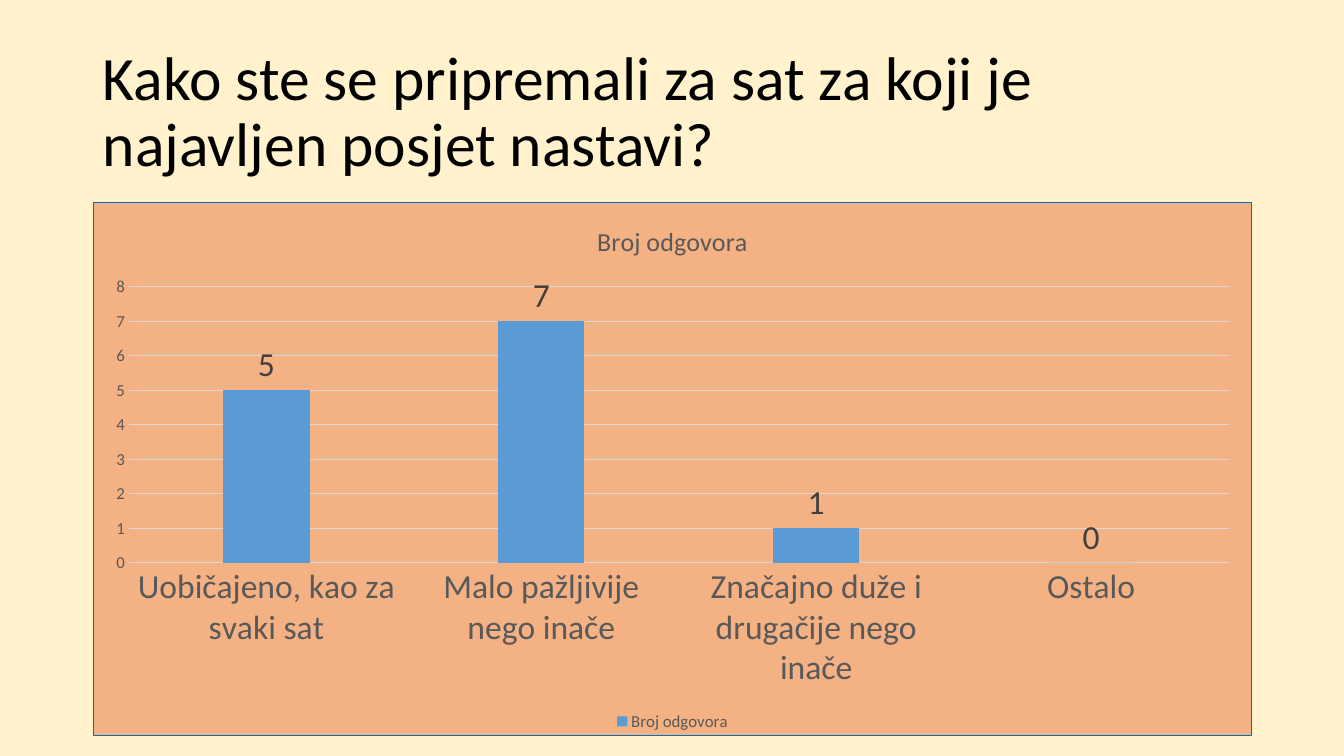
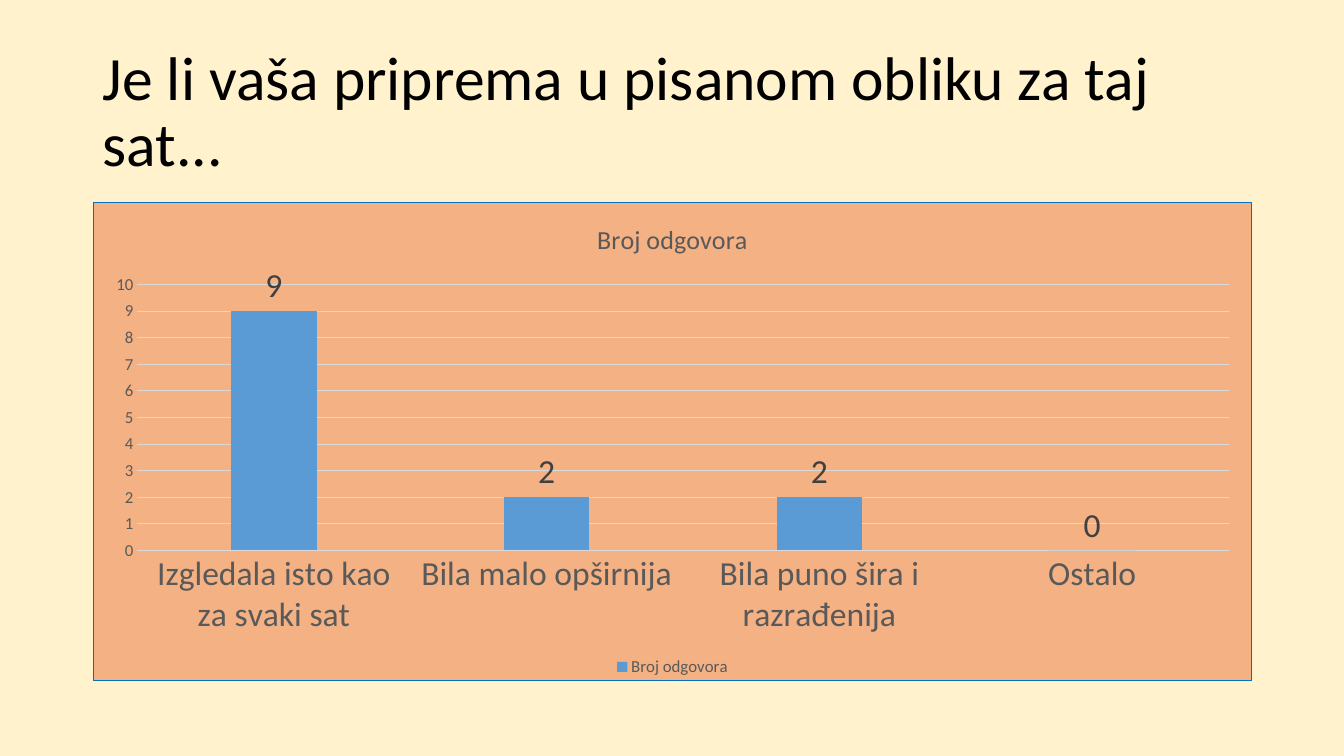
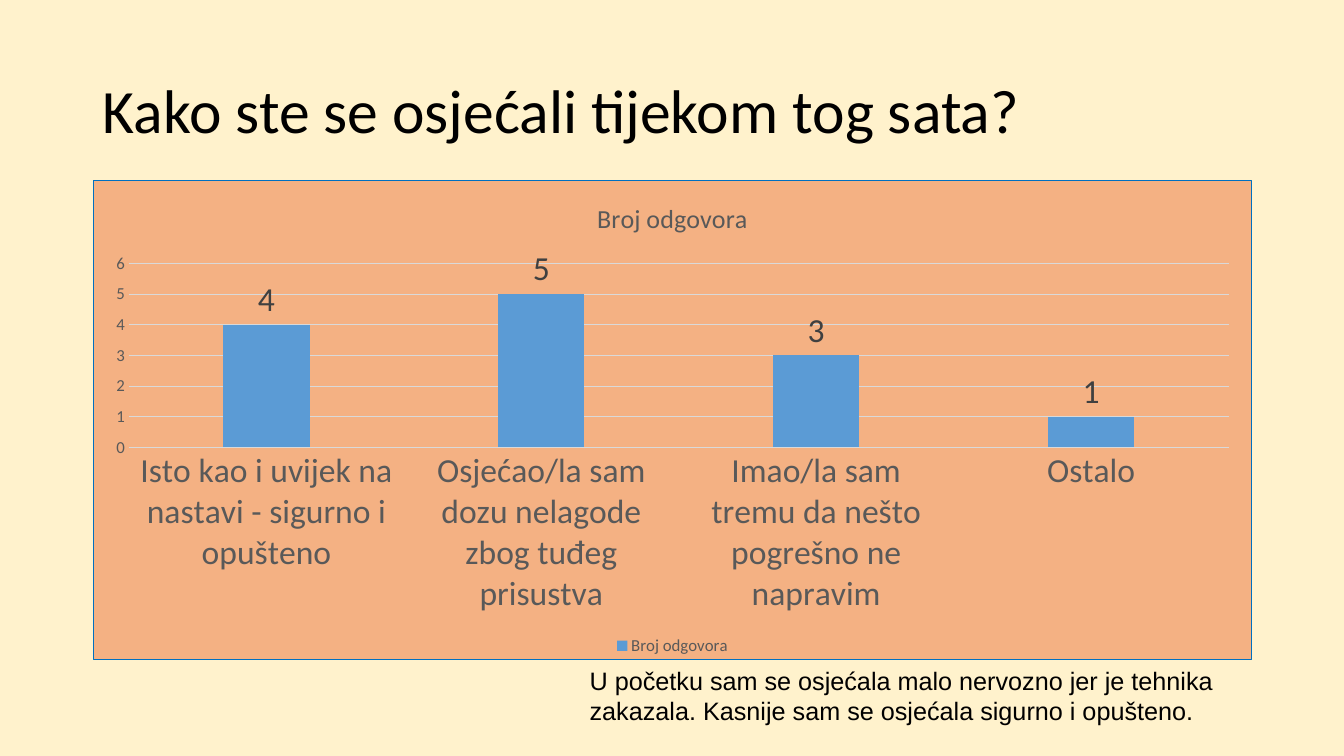
from lxml import etree
from pptx import Presentation
from pptx.chart.data import CategoryChartData
from pptx.dml.color import RGBColor
from pptx.enum.chart import XL_CHART_TYPE, XL_LABEL_POSITION, XL_LEGEND_POSITION, XL_TICK_MARK
from pptx.enum.text import MSO_ANCHOR, MSO_AUTO_SIZE, PP_ALIGN
from pptx.oxml import parse_xml
from pptx.oxml.ns import nsdecls, qn
from pptx.util import Inches, Pt

COLORS = {
    "page": "FFF2CC",
    "panel": "F4B183",
    "panel_border": "0070C0",
    "bar": "5B9BD5",
    "grid": "D9D9D9",
    "chart_text": "595959",
    "value_text": "404040",
    "text": "000000",
}
LEFT, WIDTH = 0.92, 11.5
SERIES = "Broj odgovora"

QUESTIONS = [
    {
        "title": "Kako ste se pripremali za sat za koji je najavljen posjet nastavi?",
        "answers": [
            ("Uobičajeno, kao za svaki sat", 5),
            ("Malo pažljivije nego inače", 7),
            ("Značajno duže i drugačije nego inače", 1),
            ("Ostalo", 0),
        ],
        "top": 2, "height": 5.3,
    },
    {
        "title": "Je li vaša priprema u pisanom obliku za taj sat...",
        "answers": [
            ("Izgledala isto kao za svaki sat", 9),
            ("Bila malo opširnija", 2),
            ("Bila puno šira i razrađenija", 2),
            ("Ostalo", 0),
        ],
        "top": 2, "height": 4.76,
    },
    {
        "title": "Kako ste se osjećali tijekom tog sata?",
        "answers": [
            ("Isto kao i uvijek na nastavi - sigurno i opušteno", 4),
            ("Osjećao/la sam dozu nelagode zbog tuđeg prisustva", 5),
            ("Imao/la sam tremu da nešto pogrešno ne napravim", 3),
            ("Ostalo", 1),
        ],
        "top": 1.79, "height": 4.76,
        "comment": "U početku sam se osjećala malo nervozno jer je tehnika zakazala. "
                   "Kasnije sam se osjećala sigurno i opušteno.",
    },
]


def rgb(name):
    return RGBColor.from_string(COLORS[name])


def set_font(font, size, color="chart_text", family="Calibri"):
    font.name = family
    font.size = Pt(size)
    font.bold = False
    font.color.rgb = rgb(color)


def set_line(line, color):
    line.color.rgb = rgb(color)
    line.width = Pt(0.75)


def add_title(slide, text):
    title = slide.shapes.title
    title.left, title.top = Inches(LEFT), Inches(0.4)
    title.width, title.height = Inches(WIDTH), Inches(1.45)
    frame = title.text_frame
    frame.text = text
    frame.word_wrap = True
    frame.auto_size = MSO_AUTO_SIZE.NONE
    frame.vertical_anchor = MSO_ANCHOR.MIDDLE
    paragraph = frame.paragraphs[0]
    paragraph.alignment = PP_ALIGN.LEFT
    paragraph.line_spacing = 0.9
    set_font(paragraph.runs[0].font, 44, "text")


def fill_panel(chart):
    panel = parse_xml(
        f'<c:spPr {nsdecls("c", "a")}>'
        f'<a:solidFill><a:srgbClr val="{COLORS["panel"]}"/></a:solidFill>'
        f'<a:ln w="{Pt(0.75)}"><a:solidFill><a:srgbClr val="{COLORS["panel_border"]}"/>'
        '</a:solidFill></a:ln></c:spPr>'
    )
    chart.element.find(qn("c:chart")).addnext(panel)


def style_axes(chart):
    for axis, size in ((chart.category_axis, 24), (chart.value_axis, 12)):
        axis.major_tick_mark = axis.minor_tick_mark = XL_TICK_MARK.NONE
        set_font(axis.tick_labels.font, size)
    set_line(chart.category_axis.format.line, "grid")
    chart.value_axis.format.line.fill.background()
    chart.value_axis.has_major_gridlines = True
    set_line(chart.value_axis.major_gridlines.format.line, "grid")


def add_answers_chart(slide, question):
    names, counts = zip(*question["answers"])
    data = CategoryChartData()
    data.categories = names
    data.add_series(SERIES, counts)
    chart = slide.shapes.add_chart(
        XL_CHART_TYPE.COLUMN_CLUSTERED, Inches(LEFT), Inches(question["top"]),
        Inches(WIDTH), Inches(question["height"]), data).chart
    set_font(chart.font, 10, "text")
    fill_panel(chart)
    style_axes(chart)

    chart.has_title = True
    heading = chart.chart_title.text_frame
    heading.text = SERIES
    set_font(heading.paragraphs[0].runs[0].font, 18.6)
    chart.chart_title.include_in_layout = False

    chart.has_legend = True
    chart.legend.position = XL_LEGEND_POSITION.BOTTOM
    chart.legend.include_in_layout = False
    set_font(chart.legend.font, 12)

    plot = chart.plots[0]
    plot.gap_width, plot.overlap = 219, -27
    plot.vary_by_categories = False
    bars = plot.series[0]
    bars.format.fill.solid()
    bars.format.fill.fore_color.rgb = rgb("bar")
    labels = bars.data_labels
    labels.show_value = True
    labels.position = XL_LABEL_POSITION.OUTSIDE_END
    set_font(labels.font, 24, "value_text")


def add_comment(slide, text):
    comment = slide.shapes.add_textbox(Inches(5.75), Inches(6.55), Inches(6.67), Inches(0.71))
    frame = comment.text_frame
    frame.text = text
    frame.word_wrap = True
    frame.auto_size = MSO_AUTO_SIZE.SHAPE_TO_FIT_TEXT
    set_font(frame.paragraphs[0].runs[0].font, 18, "text", "Arial")


def main():
    deck = Presentation()
    deck.slide_width, deck.slide_height = Inches(13.33), Inches(7.5)
    page = deck.slide_master.background.fill
    page.solid()
    page.fore_color.rgb = rgb("page")
    for question in QUESTIONS:
        slide = deck.slides.add_slide(deck.slide_layouts[5])
        add_title(slide, question["title"])
        add_answers_chart(slide, question)
        if "comment" in question:
            add_comment(slide, question["comment"])
    deck.save("out.pptx")


if __name__ == "__main__":
    main()
